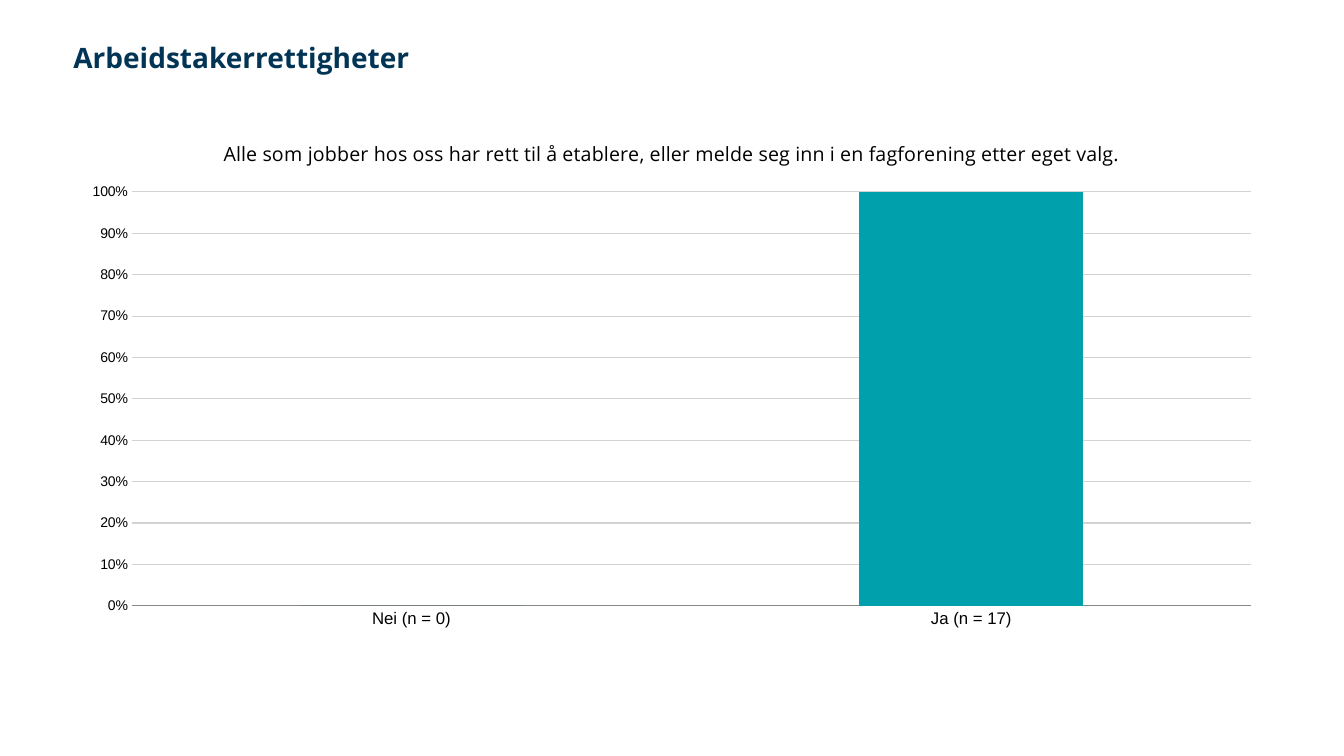
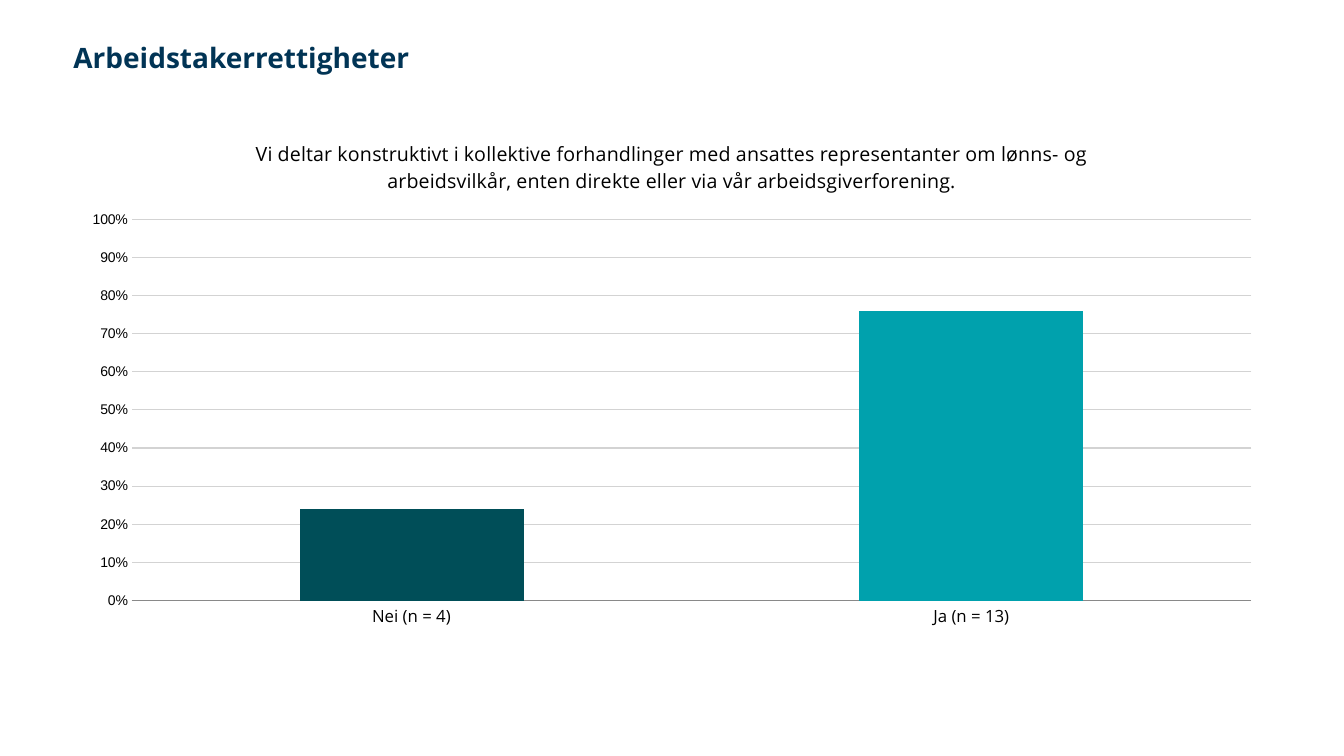
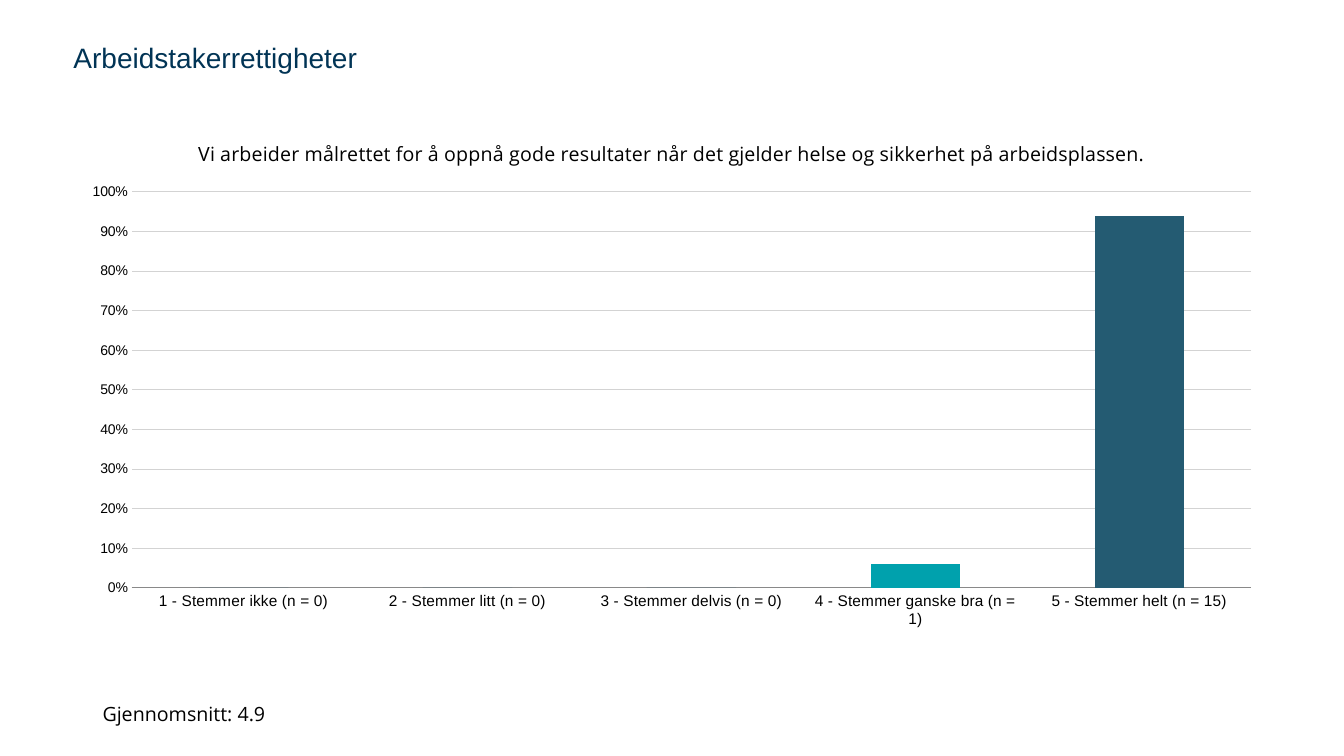
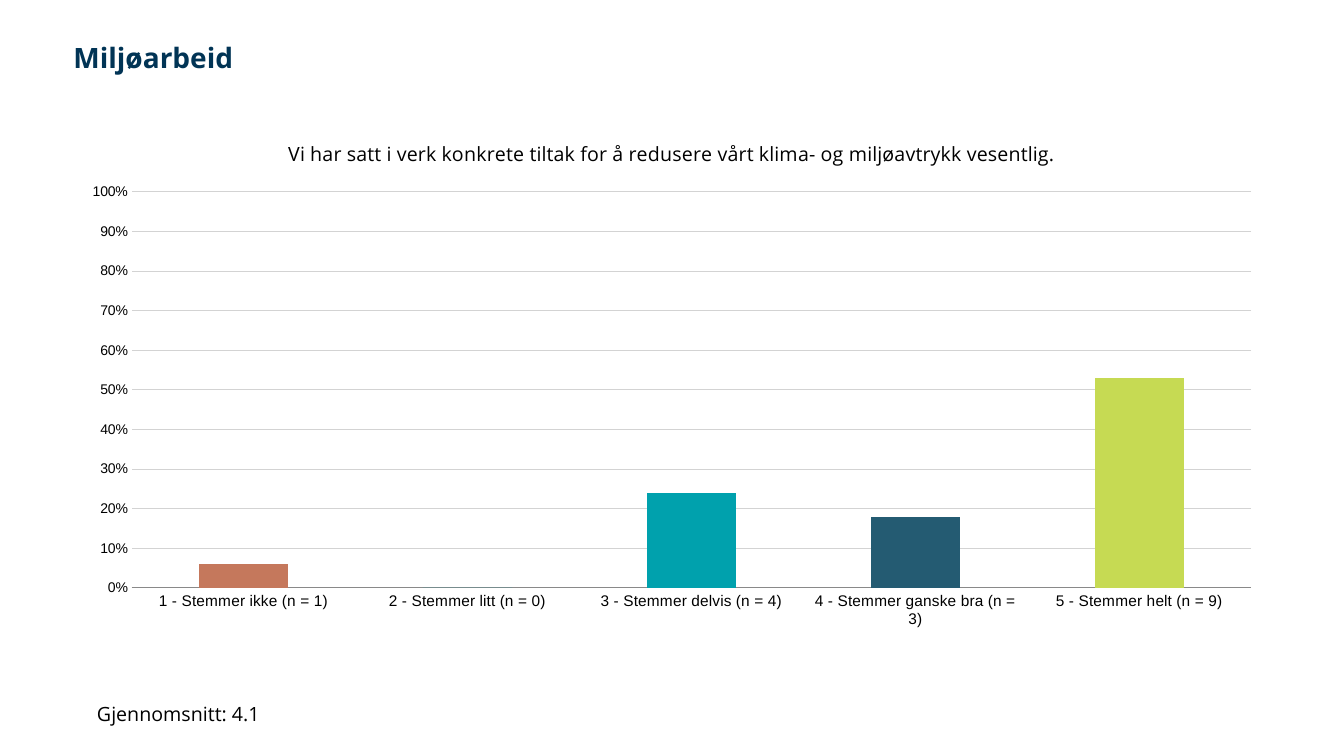
import pptx
import pptx.chart.data
import pptx.dml.color
import pptx.enum.chart
import pptx.enum.text
import pptx.util

EMU_PER_PX = 9144
SLIDE_SIZE = (1333, 750)
TITLE_BOX = (63, 42, 1197, 39)
CHART_BOX = (68, 118, 1197, 515)
AVERAGE_LEFT, AVERAGE_TOP, AVERAGE_HEIGHT = 68, 687, 42

BODY_FONT = "Open Sans"
CHART_FONT = "Arial"

RGBColor = pptx.dml.color.RGBColor
BLACK = RGBColor(0x00, 0x00, 0x00)
NAVY = RGBColor(0x01, 0x34, 0x55)
DARK_TEAL = RGBColor(0x00, 0x4E, 0x58)
TEAL = RGBColor(0x00, 0xA1, 0xAD)
BLUE = RGBColor(0x24, 0x5B, 0x72)
TERRACOTTA = RGBColor(0xC5, 0x78, 0x5C)
LIME = RGBColor(0xC6, 0xDA, 0x53)
GRID_GREY = RGBColor(0xD3, 0xD3, 0xD3)
AXIS_GREY = RGBColor(0x89, 0x89, 0x89)

YES_NO = ["Nei", "Ja"]
AGREEMENT = [
    f"{grade} - Stemmer {degree}"
    for grade, degree in enumerate(["ikke", "litt", "delvis", "ganske bra", "helt"], 1)
]
YES_NO_COLORS = [DARK_TEAL, TEAL]


def px(*lengths):
    return [pptx.util.Emu(length * EMU_PER_PX) for length in lengths]


def style_font(font, size, name, color=BLACK, bold=False):
    font.size = pptx.util.Pt(size)
    font.name = name
    font.color.rgb = color
    font.bold = bold


def add_text(slide, box, text, size, name, color=BLACK, bold=False):
    frame = slide.shapes.add_textbox(*px(*box)).text_frame
    frame.word_wrap = True
    paragraph = frame.paragraphs[0]
    paragraph.text = text
    style_font(paragraph.font, size, name, color, bold)
    return frame


def add_title(slide, text, name=BODY_FONT, bold=True):
    frame = add_text(slide, TITLE_BOX, text, 20, name, NAVY, bold)
    frame.paragraphs[0].line_spacing = 0.8


def add_average(slide, average, width):
    box = (AVERAGE_LEFT, AVERAGE_TOP, width, AVERAGE_HEIGHT)
    frame = add_text(slide, box, f"Gjennomsnitt: {average}", 14, BODY_FONT)
    frame.vertical_anchor = pptx.enum.text.MSO_ANCHOR.MIDDLE
    frame.paragraphs[0].alignment = pptx.enum.text.PP_ALIGN.CENTER


def style_axes(chart, label_size, label_font):
    no_tick = pptx.enum.chart.XL_TICK_MARK.NONE
    answers, share = chart.category_axis, chart.value_axis
    for axis, size, name in ((answers, label_size, label_font), (share, 10, CHART_FONT)):
        axis.major_tick_mark = no_tick
        axis.minor_tick_mark = no_tick
        style_font(axis.tick_labels.font, size, name)
    answers.format.line.color.rgb = AXIS_GREY
    answers.format.line.width = pptx.util.Pt(0.75)
    share.minimum_scale, share.maximum_scale, share.major_unit = 0, 1, 0.1
    share.tick_labels.number_format = "0%"
    share.tick_labels.number_format_is_linked = False
    share.format.line.fill.background()
    gridline = share.major_gridlines.format.line
    gridline.color.rgb = GRID_GREY
    gridline.width = pptx.util.Pt(0.75)


def add_answer_chart(slide, statement, answers, counts, shares, colors,
                     label_size, label_font=CHART_FONT):
    data = pptx.chart.data.CategoryChartData()
    data.categories = [f"{answer} (n = {count})" for answer, count in zip(answers, counts)]
    data.add_series("Series 1", shares)
    chart = slide.shapes.add_chart(
        pptx.enum.chart.XL_CHART_TYPE.COLUMN_CLUSTERED, *px(*CHART_BOX), data
    ).chart
    style_font(chart.font, 18, CHART_FONT)
    chart.has_legend = False
    chart.has_title = True
    heading = chart.chart_title.text_frame.paragraphs[0]
    heading.text = statement
    style_font(heading.font, 14, BODY_FONT)
    chart.chart_title.include_in_layout = False
    style_axes(chart, label_size, label_font)

    plot = chart.plots[0]
    plot.gap_width = 150
    plot.vary_by_categories = False
    series = plot.series[0]
    series.invert_if_negative = False
    for index, color in enumerate(colors):
        fill = series.points[index].format.fill
        fill.solid()
        fill.fore_color.rgb = color


def main():
    deck = pptx.Presentation()
    deck.slide_width, deck.slide_height = px(*SLIDE_SIZE)
    union, bargaining, safety, climate = [
        deck.slides.add_slide(deck.slide_layouts[6]) for _ in range(4)
    ]

    add_answer_chart(
        union,
        "Alle som jobber hos oss har rett til å etablere, eller melde seg inn i "
        "en fagforening etter eget valg.",
        YES_NO, [0, 17], [0, 1], YES_NO_COLORS, 12)
    add_title(union, "Arbeidstakerrettigheter")

    add_answer_chart(
        bargaining,
        "Vi deltar konstruktivt i kollektive forhandlinger med ansattes representanter "
        "om lønns- og arbeidsvilkår, enten direkte eller via vår arbeidsgiverforening.",
        YES_NO, [4, 13], [0.24, 0.76], YES_NO_COLORS, 12, BODY_FONT)
    add_title(bargaining, "Arbeidstakerrettigheter")

    add_answer_chart(
        safety,
        "Vi arbeider målrettet for å oppnå gode resultater når det gjelder helse og "
        "sikkerhet på arbeidsplassen.",
        AGREEMENT, [0, 0, 0, 1, 15], [0, 0, 0, 0.06, 0.94],
        [BLUE, BLUE, BLUE, TEAL, BLUE], 11)
    add_title(safety, "Arbeidstakerrettigheter", CHART_FONT, False)
    add_average(safety, 4.9, 229)

    add_answer_chart(
        climate,
        "Vi har satt i verk konkrete tiltak for å redusere vårt klima- og "
        "miljøavtrykk vesentlig.",
        AGREEMENT, [1, 0, 4, 3, 9], [0.06, 0, 0.24, 0.18, 0.53],
        [TERRACOTTA, TEAL, TEAL, BLUE, LIME], 11)
    add_title(climate, "Miljøarbeid")
    add_average(climate, 4.1, 218)

    deck.save("out.pptx")


if __name__ == "__main__":
    main()
